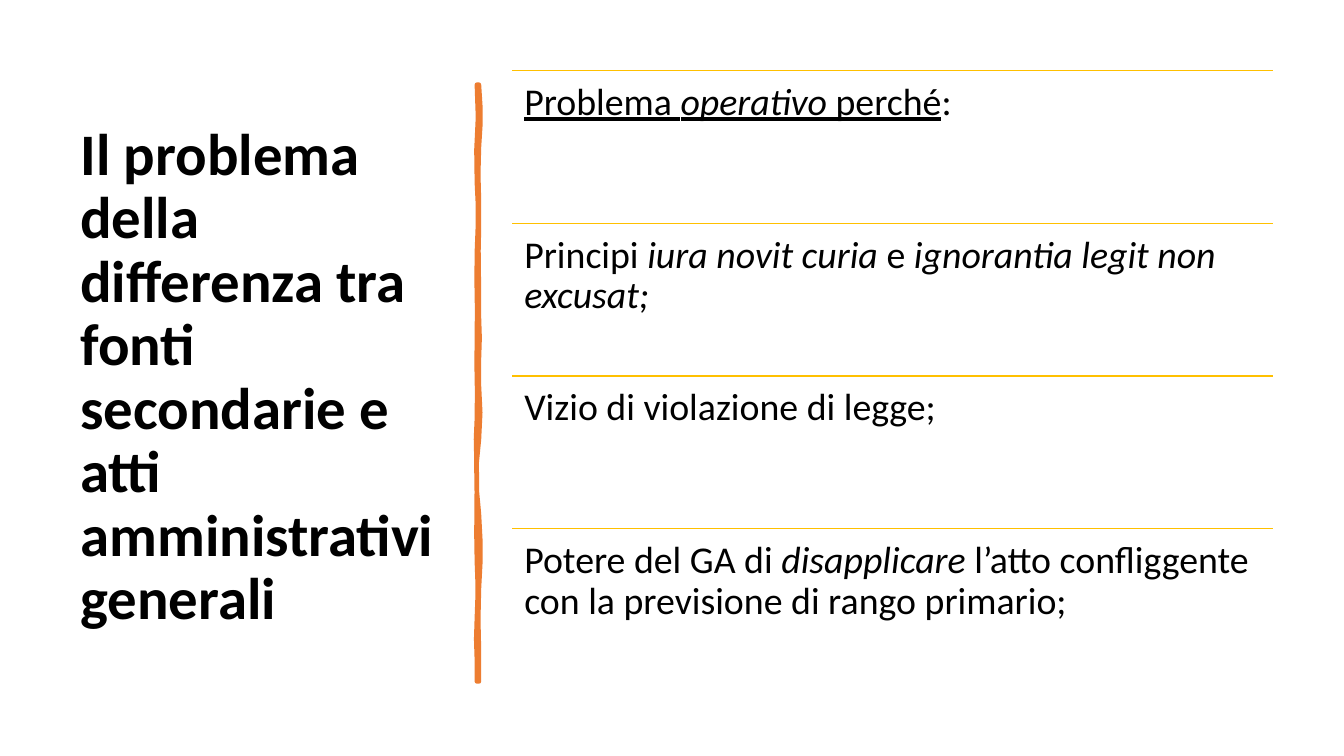
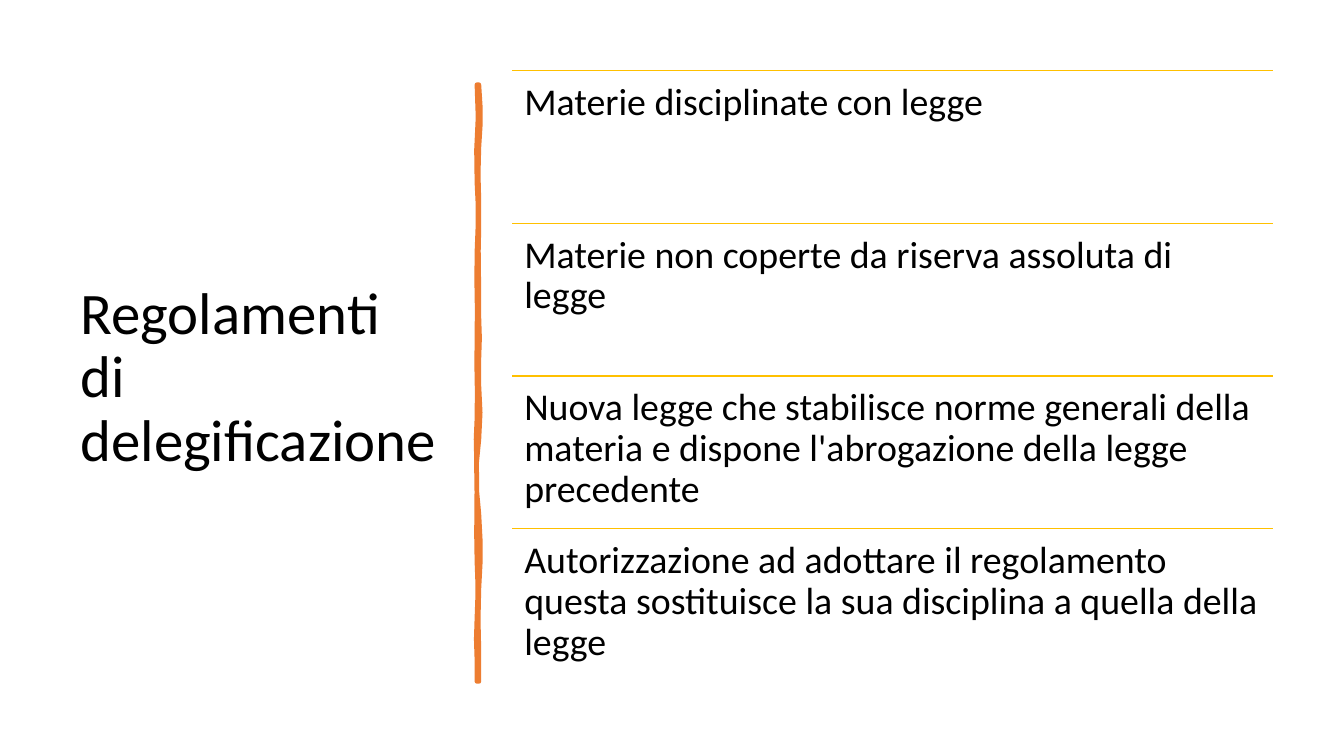
from pptx import Presentation
from pptx import util as u
from pptx.dml.color import RGBColor
from pptx.enum import shapes, text
from pptx.oxml.ns import qn
from lxml import etree

COLORS = {"ink": "000000", "stroke": "ED7D31", "rule": "FFC000"}
FONT = "Calibri"

# Regions: left, top, width, height in inches
TITLE_BOX = (0.7, 0.7, 3.74, 6.11)
STROKE_BOX = (4.73, 0.84, 0.02, 5.92)
LIST_BOX = (5.08, 0.7, 7.55, 6.06)

# Brush edges: distance down the stroke where a wave ends, and its two sideways pulls
RIGHT_EDGE = [(0.62, 0.02, 0.02), (1.42, -0.02, 0.01), (2.1, -0.01, 0),
              (2.72, -0.01, 0.02), (3.52, -0.02, 0.04), (4.26, -0.04, -0.03),
              (5, 0.02, 0.02), (5.92, -0.02, 0.01)]
LEFT_EDGE = [(5.29, 0.01, -0.02), (4.73, 0.01, 0.01), (3.93, -0.01, 0),
             (3.31, 0, -0.02), (2.51, 0.01, -0.01), (1.66, 0.01, -0.01),
             (0.97, 0.01, 0.02), (0, -0.03, 0.04)]

SLIDES = [
    {"title": "Il problema della differenza tra fonti secondarie e atti "
              "amministrativi generali",
     "bold": True,
     "items": [
         [("Problema ", "u"), ("operativo", "iu"), (" perché", "u"), (":", "")],
         [("Principi ", ""), ("iura novit curia", "i"), (" e ", ""),
          ("ignorantia legit non excusat;", "i")],
         [("Vizio di violazione di legge;", "")],
         [("Potere del GA di ", ""), ("disapplicare", "i"),
          (" l’atto confliggente con la previsione di rango primario;", "")],
     ]},
    {"title": "Regolamenti\ndi delegificazione",
     "bold": False,
     "items": [
         [("Materie disciplinate con legge", "")],
         [("Materie non coperte da riserva assoluta di legge", "")],
         [("Nuova legge che stabilisce norme generali della materia e dispone "
           "l'abrogazione della legge precedente", "")],
         [("Autorizzazione ad adottare il regolamento questa sostituisce la sua "
           "disciplina a quella della legge", "")],
     ]},
]


def rgb(name):
    return RGBColor.from_string(COLORS[name])


def add_text(s, box, runs, size, bold=False, inset=0.1,
             anchor=text.MSO_ANCHOR.TOP):
    """Text box with one paragraph; a run's marks are i (italic), u (underline)."""
    tf = s.shapes.add_textbox(*map(u.Inches, box)).text_frame
    tf.word_wrap = True
    tf.vertical_anchor = anchor
    tf.margin_left = tf.margin_right = u.Inches(inset)
    tf.margin_top = tf.margin_bottom = u.Inches(inset)
    p = tf.paragraphs[0]
    p.line_spacing = 0.9
    for words, marks in runs:
        for i, line in enumerate(words.split("\n")):
            if i:
                p.add_line_break()
            r = p.add_run()
            r.text = line
            r.font.name, r.font.size, r.font.bold = FONT, u.Pt(size), bold
            r.font.italic, r.font.underline = "i" in marks, "u" in marks
            r.font.color.rgb = rgb("ink")


def wavy(x, y, waves, steps=3):
    """Points along cubic waves that swing around a vertical line."""
    points = []
    for end, pull_1, pull_2 in waves:
        for k in range(1, steps + 1):
            t = k / steps
            swing = 3 * t * (1 - t) * ((1 - t) * pull_1 + t * pull_2)
            points.append((x + swing, y + (end - y) * t))
        y = end
    return points


def add_stroke(s, box):
    """Hand-drawn vertical brush stroke."""
    left, top, width, height = box
    outline = wavy(width, 0, RIGHT_EDGE) + [(0, height)] + wavy(0, height, LEFT_EDGE)
    points = [(u.Inches(left + x), u.Inches(top + y)) for x, y in outline]
    builder = s.shapes.build_freeform(u.Inches(left + width), u.Inches(top))
    builder.add_line_segments(points, close=True)
    sp = builder.convert_to_shape()
    sp.shadow.inherit = False
    sp.fill.solid()
    sp.fill.fore_color.rgb = rgb("stroke")
    sp.line.color.rgb = rgb("stroke")
    sp.line.width = u.Pt(3.25)
    etree.SubElement(sp._element.spPr.find(qn("a:ln")), qn("a:round"))


def add_rule(s, left, top, width):
    x, y = u.Inches(left), u.Inches(top)
    line = s.shapes.add_connector(shapes.MSO_CONNECTOR.STRAIGHT,
                                  x, y, u.Inches(left + width), y)
    line.line.color.rgb = rgb("rule")
    line.line.width = u.Pt(1)
    etree.SubElement(line._element.spPr, qn("a:effectLst"))


def add_ruled_list(s, box, items):
    """Equal rows, each with a rule above its text."""
    left, top, width, height = box
    row = height / len(items)
    for i, runs in enumerate(items):
        y = top + i * row
        add_rule(s, left, y, width)
        add_text(s, (left, y, width, row), runs, 27, inset=0.12)


def add_list_slide(prs, title, bold, items):
    s = prs.slides.add_slide(prs.slide_layouts[6])
    add_text(s, TITLE_BOX, [(title, "")], 42, bold=bold,
             anchor=text.MSO_ANCHOR.MIDDLE)
    add_stroke(s, STROKE_BOX)
    add_ruled_list(s, LIST_BOX, items)


def main():
    prs = Presentation()
    prs.slide_width, prs.slide_height = u.Inches(13.33), u.Inches(7.5)
    for content in SLIDES:
        add_list_slide(prs, **content)
    prs.save("out.pptx")


if __name__ == "__main__":
    main()
